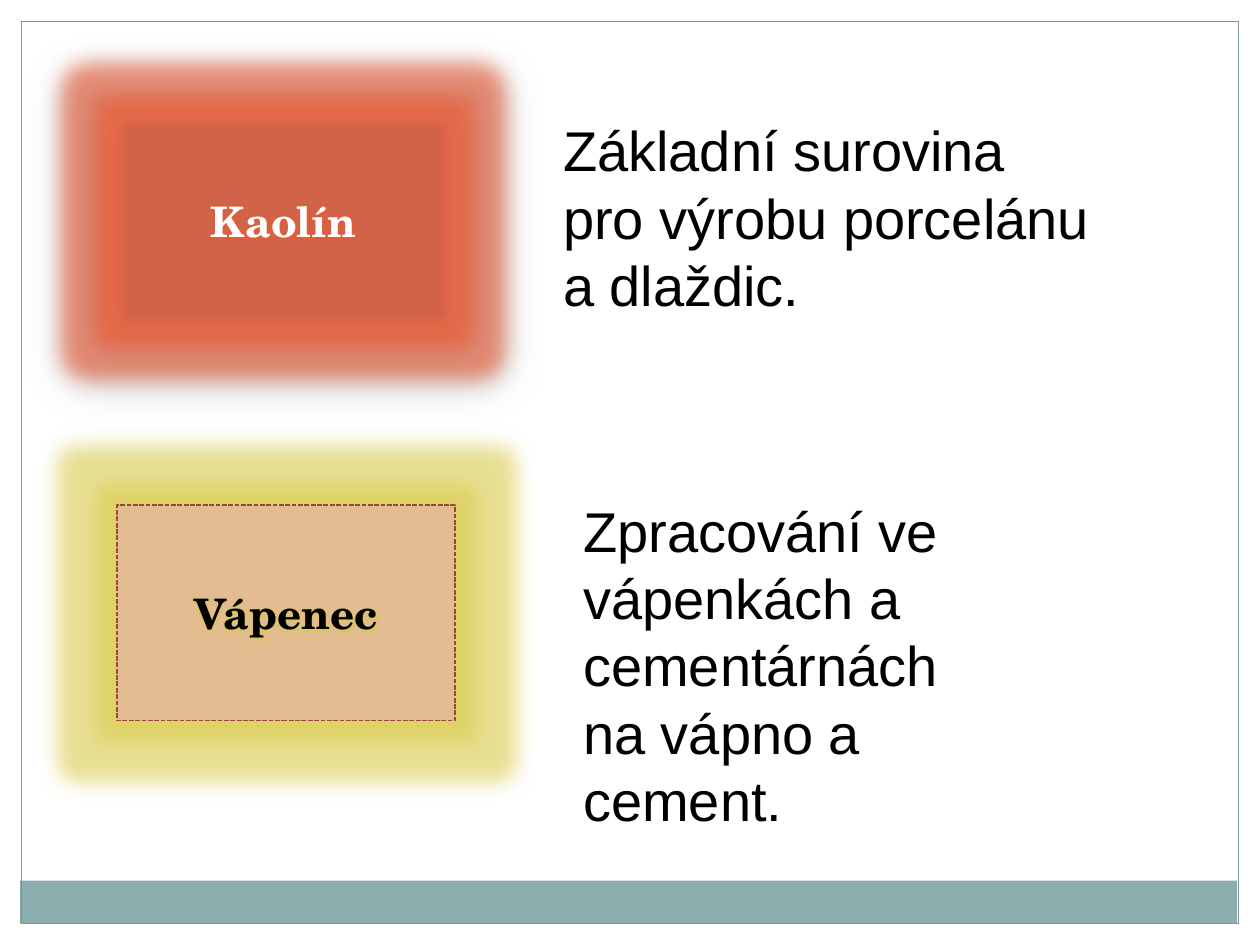
import pptx
import pptx.util
import pptx.dml.color
import pptx.enum.dml
import pptx.enum.shapes
import pptx.enum.text
import pptx.oxml

Inches, Pt = pptx.util.Inches, pptx.util.Pt
RGB = pptx.dml.color.RGBColor
RECT = pptx.enum.shapes.MSO_SHAPE.RECTANGLE
ALIGN = pptx.enum.text.PP_ALIGN
ANCHOR = pptx.enum.text.MSO_ANCHOR
NS = 'xmlns:a="http://schemas.openxmlformats.org/drawingml/2006/main"'

WHITE = RGB(0xFF, 0xFF, 0xFF)
BLACK = RGB(0, 0, 0)
TEAL = RGB(0x8C, 0xAD, 0xAE)
EDGE = RGB(0x7C, 0x99, 0x9A)
BRICK = RGB(0xD1, 0x63, 0x49)
SAND = RGB(0xE3, 0xBC, 0x92)
RUST = RGB(0x9B, 0x49, 0x36)
FLAME = RGB(0xEB, 0x5A, 0x34)
LEMON = RGB(0xD9, 0xCB, 0x4B)

# Content: minerals and their uses
SHADOW = ('<a:outerShdw blurRad="225425" dist="50800" dir="5220000" algn="ctr">'
          '<a:srgbClr val="000000"><a:alpha val="33000"/></a:srgbClr></a:outerShdw>')
SOFT = '<a:softEdge rad="63500"/>'
CARDS = [
    dict(name="Kaolín", box=(0.91, 0.92, 2.68, 1.67), fill=BRICK, ink=WHITE,
         glow=FLAME, extra=SHADOW + SOFT, line=None,
         use="Základní surovina pro výrobu porcelánu a dlaždic.",
         area=(4.37, 0.87, 4.41, 1.72)),
    dict(name="Vápenec", box=(0.93, 4.01, 2.68, 1.71), fill=SAND, ink=BLACK,
         glow=LEMON, extra="", line=RUST,
         use="Zpracování ve vápenkách a cementárnách na vápno a cement.",
         area=(4.53, 3.89, 3.54, 2.79)),
]
# Frame: box, fill, line
FRAME = [
    ((0.16, 6.99, 9.66, 0.34), TEAL, None),
    ((0.17, 0.17, 9.66, 7.16), None, EDGE),
]


def add_rect(slide, box, fill, line, width=0.75):
    shape = slide.shapes.add_shape(RECT, *map(Inches, box))
    shape.shadow.inherit = False
    if fill is None:
        shape.fill.background()
    else:
        shape.fill.solid()
        shape.fill.fore_color.rgb = fill
    if line is None:
        shape.line.fill.background()
    else:
        shape.line.color.rgb = line
        shape.line.width = Pt(width)
    return shape


def add_run(shape, text, font, size, color, align, bold=False):
    shape.text_frame.word_wrap = True
    para = shape.text_frame.paragraphs[0]
    para.alignment = align
    run = para.add_run()
    run.text = text
    run.font.name, run.font.size, run.font.bold = font, Pt(size), bold
    run.font.color.rgb = color
    return run


def glow(color, size, alpha, extra=""):
    return pptx.oxml.parse_xml(
        f'<a:effectLst {NS}><a:glow rad="{Inches(size)}"><a:srgbClr val="{color}">'
        f'<a:alpha val="{alpha * 1000}"/></a:srgbClr></a:glow>{extra}</a:effectLst>')


def add_card(slide, card):
    # Glowing label
    shape = add_rect(slide, card["box"], card["fill"], card["line"], 0.9)
    if card["line"] is not None:
        shape.line.dash_style = pptx.enum.dml.MSO_LINE.SQUARE_DOT
    props = shape._element.spPr
    old = props.find(pptx.oxml.ns.qn("a:effectLst"))
    props.replace(old, glow(card["glow"], 0.32, 60, card["extra"]))
    shape.text_frame.vertical_anchor = ANCHOR.MIDDLE
    run = add_run(shape, card["name"], "TeX Gyre Schola", 24, card["ink"],
                  ALIGN.CENTER, True)
    fill = run.font._element.find(pptx.oxml.ns.qn("a:solidFill"))
    fill.addnext(glow(card["glow"], 0.07, 60))

    # Use of the mineral
    note = slide.shapes.add_textbox(*map(Inches, card["area"]))
    add_run(note, card["use"], "Arial", 32, BLACK, ALIGN.LEFT)
    note.text_frame.auto_size = pptx.enum.text.MSO_AUTO_SIZE.SHAPE_TO_FIT_TEXT


def main():
    deck = pptx.Presentation()
    deck.slide_width, deck.slide_height = Inches(10), Inches(7.5)
    slide = deck.slides.add_slide(deck.slide_layouts[6])
    for part in FRAME:
        add_rect(slide, *part)
    for card in CARDS:
        add_card(slide, card)
    deck.save("out.pptx")


if __name__ == "__main__":
    main()
